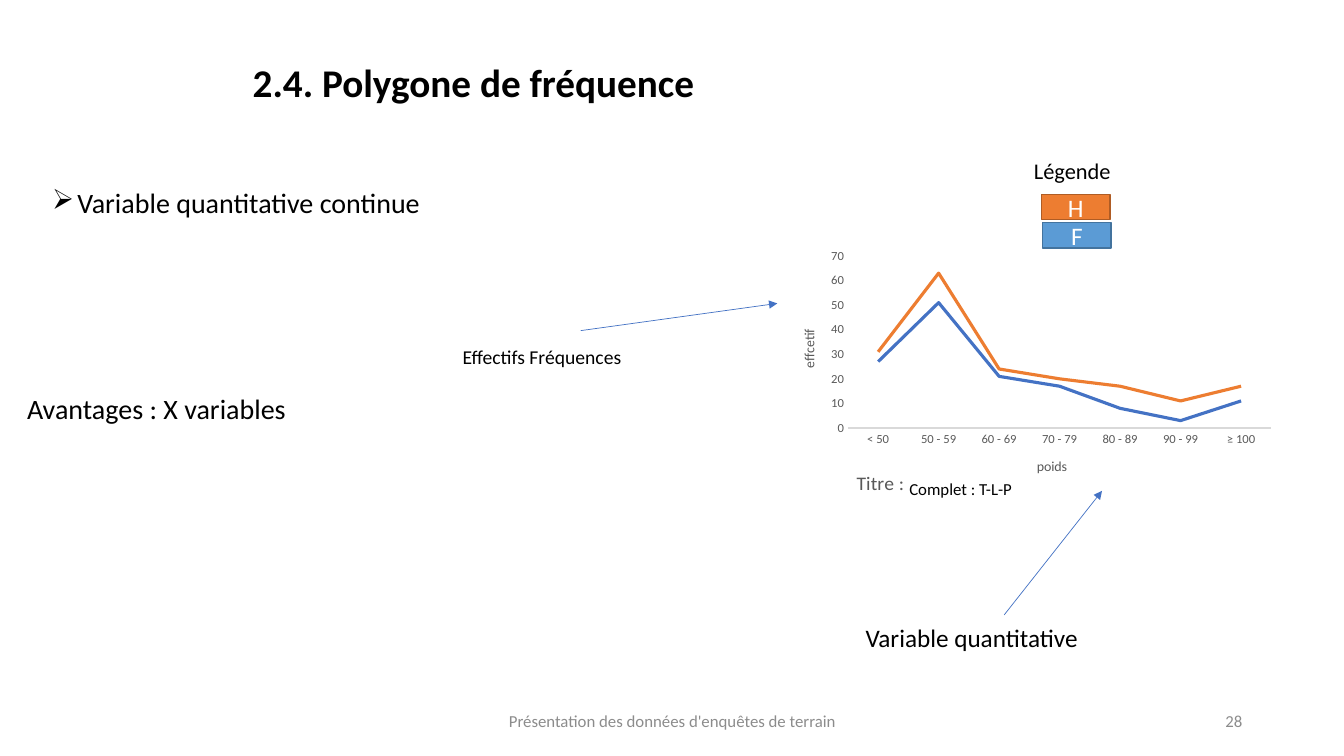
"""Build the slide on frequency polygons."""
from lxml import etree
from pptx import Presentation
from pptx import util as u
from pptx.chart.data import CategoryChartData
from pptx.dml.color import RGBColor
from pptx.enum import chart as charts, shapes, text
from pptx.oxml import parse_xml
from pptx.oxml.ns import nsdecls, qn

PX = 9144
FONT = "Calibri"
COLORS = {
    "black": "000000", "white": "FFFFFF", "footer": "8C8C8C",
    "label": "595959", "axis": "D9D9D9", "line_f": "4472C4",
    "orange": "ED7D31", "orange_edge": "AF5C24",
    "blue": "5B9BD5", "blue_edge": "43739E",
}
LEFT, CENTER, RIGHT = text.PP_ALIGN.LEFT, text.PP_ALIGN.CENTER, text.PP_ALIGN.RIGHT
TOP, MIDDLE = text.MSO_ANCHOR.TOP, text.MSO_ANCHOR.MIDDLE


def px(*lengths):
    """Turn px lengths into EMU."""
    return [u.Emu(length * PX) for length in lengths]


def color(name):
    """Return a named colour."""
    return RGBColor.from_string(COLORS[name])


def style_font(font, size, name="black", bold=False):
    """Set the face, size, colour and weight of a font."""
    font.name, font.size, font.bold = FONT, u.Pt(size), bold
    font.color.rgb = color(name)


def write(frame, wording, size, name="black", align=LEFT, anchor=MIDDLE, bold=False):
    """Write one paragraph into a text frame and return it."""
    frame.word_wrap = True
    frame.vertical_anchor = anchor
    paragraph = frame.paragraphs[0]
    paragraph.alignment = align
    run = paragraph.add_run()
    run.text = wording
    style_font(run.font, size, name, bold)
    return paragraph


def add_title(slide, box, wording):
    """Place and format the slide title."""
    title = slide.shapes.title
    title.left, title.top, title.width, title.height = px(*box)
    paragraph = write(title.text_frame, wording, 28, align=CENTER, bold=True)
    paragraph.line_spacing = 0.9


def add_text(slide, box, wording, size, **options):
    """Add a text box and return its paragraph."""
    shape = slide.shapes.add_textbox(*px(*box))
    return write(shape.text_frame, wording, size, **options)


def add_point(slide, box, wording, bullet=None):
    """Add a body line, with an arrow bullet if one is given."""
    paragraph = add_text(slide, box, wording, 20, anchor=TOP)
    paragraph.line_spacing, paragraph.space_before = 0.9, u.Pt(10)
    if bullet:
        properties = paragraph._p.get_or_add_pPr()
        properties.set("marL", str(25 * PX))
        properties.set("indent", str(-25 * PX))
        etree.SubElement(properties, qn("a:buChar")).set("char", bullet)


def add_label(slide, box, wording, size, fill="white", edge="white",
              name="black", align=CENTER):
    """Add a filled rectangle with a label."""
    shape = slide.shapes.add_shape(shapes.MSO_SHAPE.RECTANGLE, *px(*box))
    shape.shadow.inherit = False
    shape.fill.solid()
    shape.fill.fore_color.rgb = color(fill)
    shape.line.color.rgb = color(edge)
    shape.line.width = u.Pt(1)
    write(shape.text_frame, wording, size, name, align)


def add_key(slide, box):
    """Add the two stacked colour keys."""
    left, top, width, height = box
    keys = [("H", "orange", "orange_edge"), ("F", "blue", "blue_edge")]
    for row, (wording, fill, edge) in enumerate(keys):
        add_label(slide, (left + row, top + 28 * row, width, height),
                  wording, 18, fill, edge, "white")


def add_arrow(slide, start, end):
    """Add a thin arrow from start to end."""
    arrow = slide.shapes.add_connector(
        shapes.MSO_CONNECTOR.STRAIGHT, *px(*start, *end))
    arrow.line.color.rgb = color("line_f")
    arrow.line.width = u.Pt(0.5)
    etree.SubElement(arrow.line._get_or_add_ln(), qn("a:tailEnd")).set("type", "triangle")
    etree.SubElement(arrow._element.spPr, qn("a:effectLst"))


def set_layout(element, **places):
    """Give a chart part a manual position, as fractions of the chart."""
    for old in element.findall(qn("c:layout")):
        element.remove(old)
    layout = etree.Element(qn("c:layout"))
    manual = etree.SubElement(layout, qn("c:manualLayout"))
    if "w" in places:
        etree.SubElement(manual, qn("c:layoutTarget")).set("val", "inner")
    for key in ("x", "y"):
        etree.SubElement(manual, qn(f"c:{key}Mode")).set("val", "edge")
    for key, value in places.items():
        etree.SubElement(manual, qn(f"c:{key}")).set("val", str(value))
    element.insert(0 if element.find(qn("c:tx")) is None else 1, layout)


def add_chart_title(title, wording, size, x, y, rotation=0):
    """Write and place a chart title or an axis title."""
    frame = title.text_frame
    run = frame.paragraphs[0].add_run()
    run.text = wording
    style_font(run.font, size, "label")
    frame._txBody.bodyPr.set("rot", str(rotation * 60000))
    set_layout(title._element, x=x, y=y)


def add_polygon_chart(slide, box):
    """Add the frequency polygon with its axes and titles."""
    data = CategoryChartData()
    data.categories = ["< 50", "50 - 59", "60 - 69", "70 - 79",
                       "80 - 89", "90 - 99", "≥ 100"]
    data.add_series("F", [27, 51, 21, 17, 8, 3, 11])
    data.add_series("H", [31, 63, 24, 20, 17, 11, 17])
    chart = slide.shapes.add_chart(charts.XL_CHART_TYPE.LINE, *px(*box), data).chart
    style_font(chart.font, 10)
    chart.has_legend = False
    chart._chartSpace.find(qn("c:chart")).addnext(parse_xml(
        f'<c:spPr {nsdecls("c", "a")}><a:noFill/><a:ln><a:noFill/></a:ln></c:spPr>'))

    plot = chart.plots[0]
    plot.vary_by_categories = False
    for series, name in zip(plot.series, ("line_f", "orange")):
        series.smooth = False
        series.marker.style = charts.XL_MARKER_STYLE.NONE
        series.format.line.color.rgb = color(name)
        series.format.line.width = u.Pt(2.25)
    set_layout(chart._chartSpace.chart.plotArea, x=0.14, y=0.19, w=0.84, h=0.58)

    for axis in (chart.category_axis, chart.value_axis):
        axis.has_major_gridlines = False
        axis.major_tick_mark = axis.minor_tick_mark = charts.XL_TICK_MARK.NONE
        style_font(axis.tick_labels.font, 9, "label")
    chart.category_axis.format.line.color.rgb = color("axis")
    chart.category_axis.format.line.width = u.Pt(0.75)
    values = chart.value_axis
    values.format.line.fill.background()
    values.minimum_scale, values.maximum_scale, values.major_unit = 0, 70, 10

    add_chart_title(chart.chart_title, "Titre :", 14, 0.15, 0.9)
    add_chart_title(chart.category_axis.axis_title, "poids", 10, 0.51, 0.86)
    add_chart_title(values.axis_title, "effcetif", 10, 0.04, 0.43, -90)


def add_footer(slide, box, number_box):
    """Add the footer wording and the slide number."""
    add_text(slide, box, "Présentation des données d'enquêtes de terrain", 12,
             name="footer", align=CENTER)
    add_text(slide, number_box, "28", 12, name="footer", align=RIGHT)


def main():
    """Build and save the presentation."""
    presentation = Presentation()
    presentation.slide_width, presentation.slide_height = px(1333, 750)
    slide = presentation.slides.add_slide(presentation.slide_layouts[5])
    add_title(slide, (118, 40, 703, 89), "2.4. Polygone de fréquence")
    add_point(slide, (42, 183, 603, 89), "Variable quantitative continue", "➢")
    add_label(slide, (449, 328, 196, 52), "Effectifs Fréquences", 14, align=LEFT)
    add_label(slide, (797, 607, 339, 50), "Variable quantitative ", 18)
    add_key(slide, (1033, 193, 68, 25))
    add_arrow(slide, (576, 328), (771, 301))
    add_point(slide, (17, 387, 376, 55), "Avantages : X variables")
    add_label(slide, (892, 472, 144, 25), "Complet : T-L-P", 12, align=LEFT)
    add_footer(slide, (442, 695, 450, 40), (942, 695, 300, 40))
    add_polygon_chart(slide, (771, 198, 500, 300))
    add_arrow(slide, (996, 610), (1093, 487))
    add_label(slide, (994, 151, 144, 37), "Légende ", 16)
    presentation.save("out.pptx")


if __name__ == "__main__":
    main()
